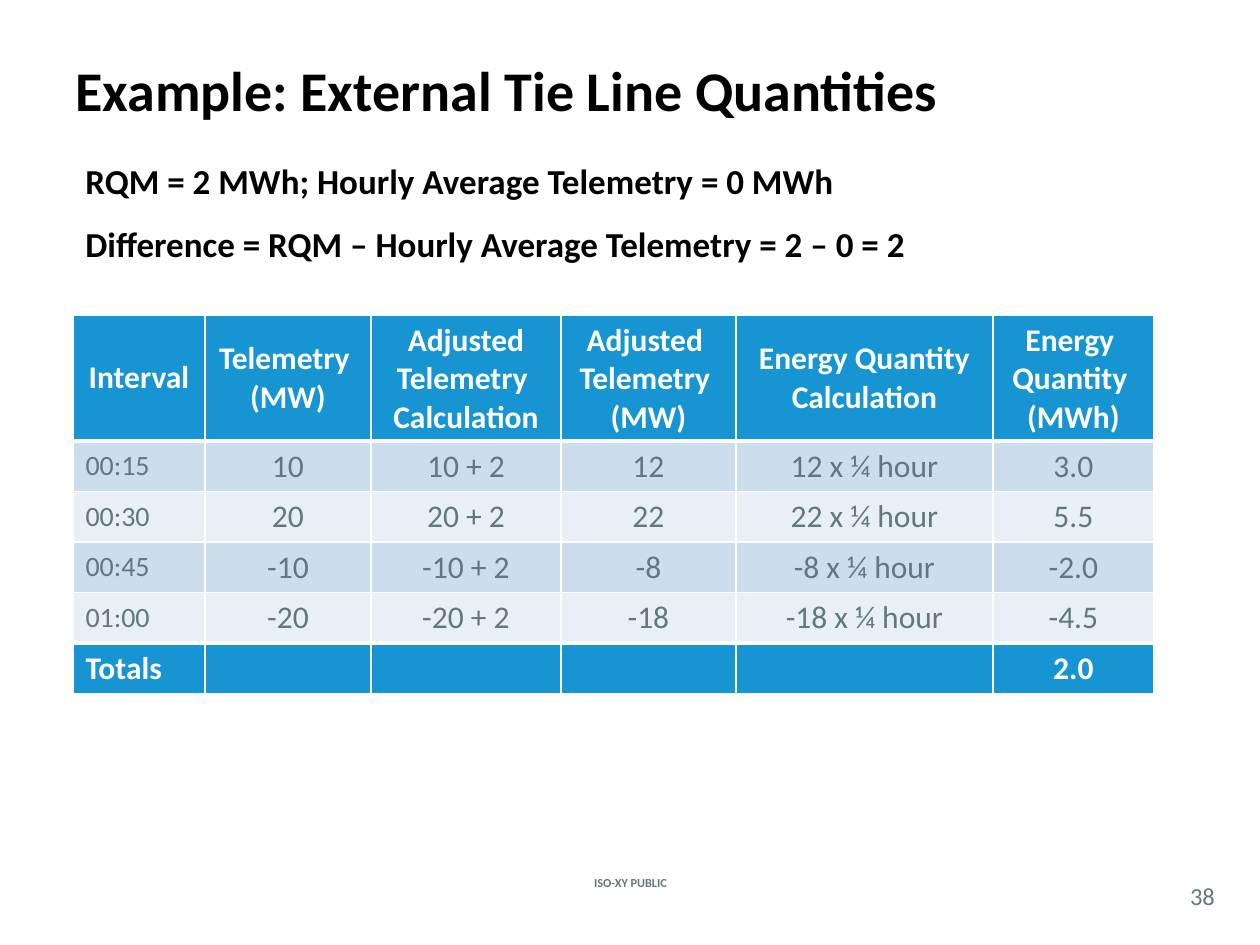
from dataclasses import dataclass

from lxml import etree
from pptx import Presentation
from pptx.dml.color import RGBColor
from pptx.enum.text import MSO_ANCHOR, PP_ALIGN
from pptx.oxml.ns import qn
from pptx.util import Emu, Pt

SCALE = 914400 / 126
LEFT, CENTER = PP_ALIGN.LEFT, PP_ALIGN.CENTER
TOP, MIDDLE = MSO_ANCHOR.TOP, MSO_ANCHOR.MIDDLE
BLACK, WHITE, GRAY = "000000", "FFFFFF", "62777F"
BLUE, BANDS = "1795D2", ("CCDDEE", "E8EFF7")
TABLE_BOX = (73, 315, 1081, 376)
COLUMNS = (132, 166, 190, 175, 257, 161)
HEADER_HEIGHT, ROW_HEIGHT = 126, 50
HANGING = 48
HEADERS = [
    "Interval",
    "Telemetry \v(MW)",
    "Adjusted Telemetry \nCalculation",
    "Adjusted \nTelemetry \v(MW)",
    "Energy Quantity Calculation",
    "Energy \nQuantity \n(MWh)",
]
READINGS = [("00:15", 10), ("00:30", 20), ("00:45", -10), ("01:00", -20)]
DIFFERENCE = 2


@dataclass(frozen=True)
class Style:
    size: int
    color: str
    bold: bool = False
    align: PP_ALIGN = LEFT
    anchor: MSO_ANCHOR = MIDDLE


@dataclass(frozen=True)
class Label:
    text: str
    box: tuple[int, int, int, int]
    style: Style
    inset: bool = True


LABELS = [
    Label("ISO-XY PUBLIC", (538, 872, 185, 21), Style(7, GRAY, True, CENTER)),
    Label("38", (1176, 877, 53, 37), Style(14, GRAY, align=CENTER), False),
    Label("Example: External Tie Line Quantities", (63, 10, 1134, 158), Style(32, BLACK, True)),
]
FORMULAS = Label(
    "RQM = 2 MWh; Hourly Average Telemetry = 0 MWh\n"
    "Difference = RQM – Hourly Average Telemetry = 2 – 0 = 2",
    (73, 158, 1071, 116),
    Style(20, BLACK, True, anchor=TOP),
)
HEADER = Style(18, WHITE, True, CENTER)
INTERVAL = Style(16, GRAY)
VALUE = Style(18, GRAY, align=CENTER, anchor=TOP)
TOTAL_NAME = Style(18, WHITE, True, anchor=TOP)
TOTAL_VALUE = Style(18, WHITE, True, CENTER, TOP)


def px(n: int) -> Emu:
    return Emu(round(n * SCALE))


def rgb(color: str) -> RGBColor:
    return RGBColor.from_string(color)


def write(tf, text: str, style: Style) -> None:
    tf.text = text
    for p in tf.paragraphs:
        p.alignment = style.align
        p.font.color.rgb = rgb(style.color)
        formats = {"name": "Calibri", "size": Pt(style.size), "bold": style.bold}
        for r in p.runs:
            r.font.color.rgb = rgb(style.color)
            for name, value in formats.items():
                setattr(r.font, name, value)


def add_label(s, label: Label):
    tf = s.shapes.add_textbox(*map(px, label.box)).text_frame
    formats = {"word_wrap": True, "vertical_anchor": label.style.anchor}
    if not label.inset:
        sides = ("left", "top", "right", "bottom")
        formats.update({f"margin_{side}": 0 for side in sides})
    for name, value in formats.items():
        setattr(tf, name, value)
    write(tf, label.text, label.style)
    return tf


def add_formulas(s) -> None:
    first, second = add_label(s, FORMULAS).paragraphs
    for p in (first, second):
        pPr = p._p.get_or_add_pPr()
        pPr.set("marL", str(px(HANGING)))
        pPr.set("indent", str(px(-HANGING)))
    first.line_spacing = 0.9
    second.space_before = Pt(12)


def set_borders(cell, top: int, bottom: int) -> None:
    tcPr = cell._tc.get_or_add_tcPr()
    widths = {"a:lnL": 1, "a:lnR": 1, "a:lnT": top, "a:lnB": bottom}
    for tag, width in widths.items():
        ln = etree.SubElement(tcPr, qn(tag), w=str(Pt(width)))
        fill = etree.SubElement(ln, qn("a:solidFill"))
        etree.SubElement(fill, qn("a:srgbClr"), val=WHITE)


def table_rows() -> list[list[str]]:
    rows, total = [HEADERS], 0
    for interval, telemetry in READINGS:
        adjusted = telemetry + DIFFERENCE
        energy = adjusted / 4
        total += energy
        rows.append([
            interval, str(telemetry), f"{telemetry} + {DIFFERENCE}",
            str(adjusted), f"{adjusted} x ¼ hour", f"{energy:.1f}",
        ])
    return rows + [["Totals", "", "", "", "", f"{total:.1f}"]]


def cell_style(row: int, col: int, last: int) -> Style:
    if row == 0:
        return HEADER
    if row == last:
        return TOTAL_VALUE if col else TOTAL_NAME
    return VALUE if col else INTERVAL


def add_energy_table(s) -> None:
    rows = table_rows()
    last = len(rows) - 1
    table = s.shapes.add_table(len(rows), len(COLUMNS), *map(px, TABLE_BOX)).table
    table.first_row = table.horz_banding = False
    for column, width in zip(table.columns, COLUMNS):
        column.width = px(width)
    for i, texts in enumerate(rows):
        table.rows[i].height = px(ROW_HEIGHT if i else HEADER_HEIGHT)
        color = BLUE if i in (0, last) else BANDS[(i - 1) % 2]
        for j, text in enumerate(texts):
            cell = table.cell(i, j)
            style = cell_style(i, j, last)
            set_borders(cell, 3 if i in (1, last) else 1, 3 if i in (0, last - 1) else 1)
            cell.fill.solid()
            cell.fill.fore_color.rgb = rgb(color)
            cell.vertical_anchor = style.anchor
            write(cell.text_frame, text, style)


def main() -> None:
    prs = Presentation()
    prs.slide_width, prs.slide_height = px(1260), px(945)
    s = prs.slides.add_slide(prs.slide_layouts[6])
    for label in LABELS:
        add_label(s, label)
    add_energy_table(s)
    add_formulas(s)
    prs.save("out.pptx")


if __name__ == "__main__":
    main()
